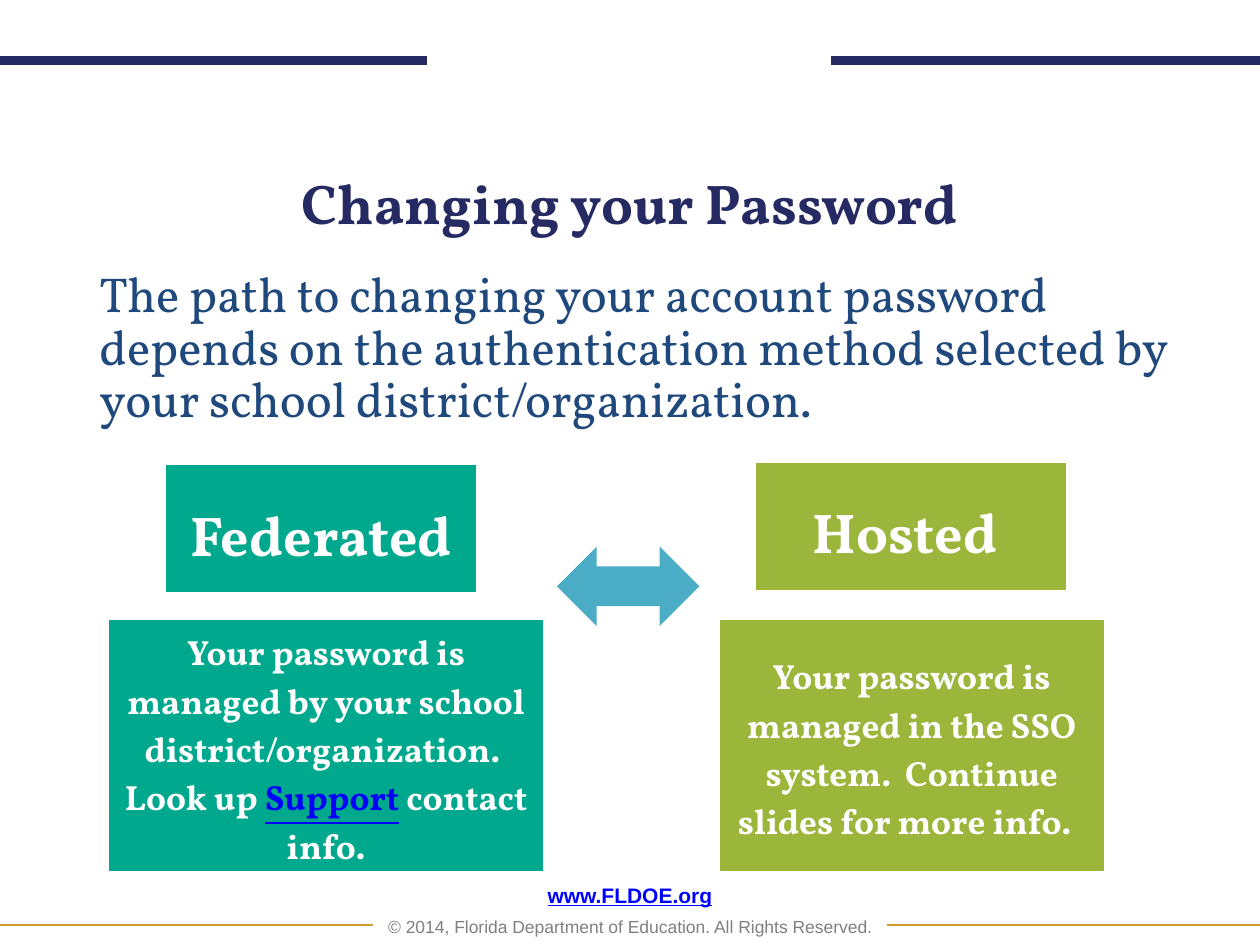
from dataclasses import dataclass

from lxml.etree import SubElement
from pptx import Presentation
from pptx.dml.color import RGBColor
from pptx.enum.shapes import MSO_CONNECTOR, MSO_SHAPE
from pptx.enum.text import MSO_ANCHOR, MSO_AUTO_SIZE, PP_ALIGN
from pptx.oxml.ns import qn
from pptx.util import Cm, Pt


@dataclass(frozen=True)
class Theme:
    serif: str = "Vollkorn"
    sans: str = "Arial"
    navy: str = "262A63"
    blue: str = "1F497D"
    link: str = "0000FF"
    gold: str = "CD9D2C"
    grey: str = "808080"
    white: str = "FFFFFF"
    teal: str = "00A88D"
    green: str = "9CB63C"
    sky: str = "4BACC6"
    heading: int = 32
    body: int = 28
    detail: int = 20
    address: int = 12
    copyright: int = 10


THEME = Theme()
PAGE_WIDTH, PAGE_HEIGHT = 25.4, 19.05
MARGIN = 1.75


def color(value):
    return RGBColor.from_string(value)


def style(span, font, size, ink, bold=False, underline=False):
    span.font.name = font
    span.font.size = Pt(size)
    span.font.color.rgb = color(ink)
    span.font.bold = bold
    span.font.underline = underline


def place(shape, left, top, width, height):
    shape.left, shape.top = Cm(left), Cm(top)
    shape.width, shape.height = Cm(width), Cm(height)


def fill_placeholder(shape, text, bounds, anchor, align, size, ink, bold):
    place(shape, *bounds)
    frame = shape.text_frame
    frame.text = text
    frame.auto_size = MSO_AUTO_SIZE.NONE
    frame.vertical_anchor = anchor
    para = frame.paragraphs[0]
    para.alignment = align
    para.line_spacing = 0.9
    para.space_before = Pt(0)
    style(para.runs[0], THEME.serif, size, ink, bold)
    return para


def remove_bullet(para):
    properties = para._p.get_or_add_pPr()
    properties.set("marL", "0")
    properties.set("indent", "0")
    SubElement(properties, qn("a:buNone"))


def add_rule(page, start, end, height, ink, weight):
    rule = page.shapes.add_connector(
        MSO_CONNECTOR.STRAIGHT, Cm(start), Cm(height), Cm(end), Cm(height))
    rule.line.color.rgb = color(ink)
    rule.line.width = Pt(weight)
    SubElement(rule._element.spPr, qn("a:effectLst"))


def add_rule_pair(page, gap_start, gap_end, height, ink, weight):
    """Draw a full-width rule with a gap in the middle."""
    add_rule(page, 0, gap_start, height, ink, weight)
    add_rule(page, gap_end, PAGE_WIDTH, height, ink, weight)


def add_card(page, bounds, fill, size, parts):
    """Add a filled box; parts are (text, is_link) pairs."""
    card = page.shapes.add_shape(MSO_SHAPE.ROUNDED_RECTANGLE, *map(Cm, bounds))
    card.adjustments[0] = 0
    card.shadow.inherit = False
    card.fill.solid()
    card.fill.fore_color.rgb = color(fill)
    card.line.color.rgb = color(THEME.white)
    card.line.width = Pt(1.5)
    frame = card.text_frame
    frame.word_wrap = True
    frame.vertical_anchor = MSO_ANCHOR.MIDDLE
    para = frame.paragraphs[0]
    para.alignment = PP_ALIGN.CENTER
    para.line_spacing = 1.15
    for text, is_link in parts:
        span = para.add_run()
        span.text = text
        ink = THEME.link if is_link else THEME.white
        style(span, THEME.serif, size, ink, True, is_link)


def add_double_arrow(page, bounds):
    arrow = page.shapes.add_shape(MSO_SHAPE.LEFT_RIGHT_ARROW, *map(Cm, bounds))
    arrow.shadow.inherit = False
    arrow.fill.solid()
    arrow.fill.fore_color.rgb = color(THEME.sky)
    arrow.line.fill.background()


def add_footer(page):
    box = page.shapes.add_textbox(Cm(MARGIN), Cm(17.93), Cm(21.9), Cm(1.09))
    frame = box.text_frame
    frame.word_wrap = True
    frame.vertical_anchor = MSO_ANCHOR.BOTTOM
    address = frame.paragraphs[0]
    address.text = "www.FLDOE.org"
    notice = frame.add_paragraph()
    notice.text = "© 2014, Florida Department of Education. All Rights Reserved."
    notice.space_before = Pt(6)
    for para in frame.paragraphs:
        para.alignment = PP_ALIGN.CENTER
        para.line_spacing = 0.9
    style(address.runs[0], THEME.sans, THEME.address, THEME.link, True, True)
    style(notice.runs[0], THEME.sans, THEME.copyright, THEME.grey)


def main():
    deck = Presentation()
    deck.slide_width, deck.slide_height = Cm(PAGE_WIDTH), Cm(PAGE_HEIGHT)
    page = deck.slides.add_slide(deck.slide_layouts[1])

    fill_placeholder(
        page.shapes.title, "Changing your Password", (MARGIN, 2.69, 21.9, 2.21),
        MSO_ANCHOR.BOTTOM, PP_ALIGN.CENTER, THEME.heading, THEME.navy, True)
    intro = fill_placeholder(
        page.placeholders[1],
        "The path to changing your account password depends on the "
        "authentication method selected by your school district/organization.",
        (MARGIN, 5.31, 22.58, 12.09),
        MSO_ANCHOR.TOP, PP_ALIGN.LEFT, THEME.body, THEME.blue, False)
    remove_bullet(intro)

    add_rule_pair(page, 8.61, 16.76, 1.22, THEME.navy, 5)
    add_rule_pair(page, 7.52, 17.88, 18.64, THEME.gold, 1)
    add_footer(page)

    add_card(page, (3.33, 9.35, 6.3, 2.62), THEME.teal, THEME.heading,
             [("Federated", False)])
    add_card(page, (15.21, 9.3, 6.3, 2.62), THEME.green, THEME.heading,
             [("Hosted ", False)])
    add_card(page, (2.18, 12.47, 8.79, 5.11), THEME.teal, THEME.detail,
             [("Your password is managed by your school "
               "district/organization.  Look up ", False),
              ("Support", True), (" contact info.", False)])
    add_card(page, (14.48, 12.47, 7.8, 5.11), THEME.green, THEME.detail,
             [("Your password is managed in the SSO system.  "
               "Continue slides for more info.  ", False)])
    add_double_arrow(page, (11.23, 11.02, 2.87, 1.6))

    deck.save("out.pptx")


if __name__ == "__main__":
    main()
